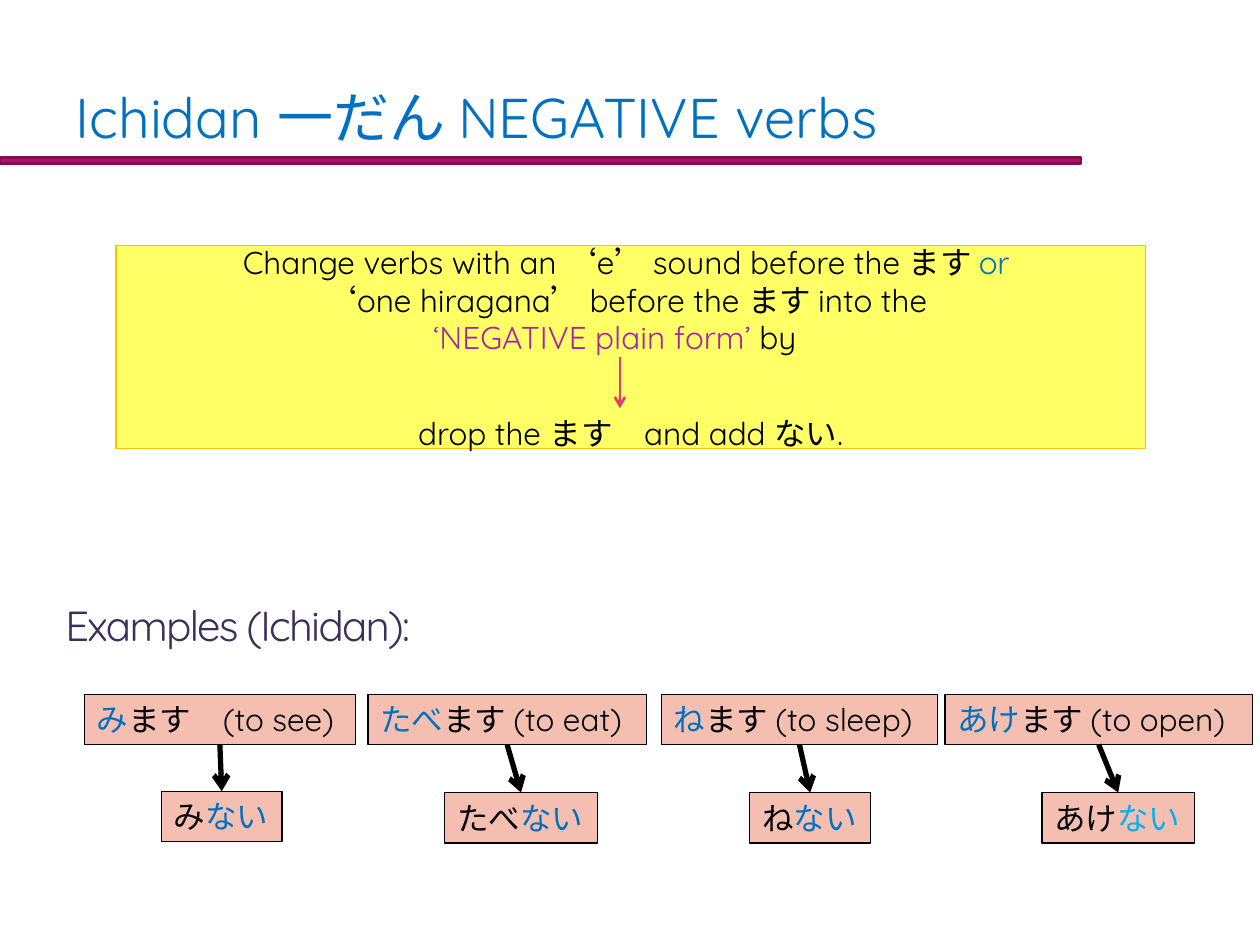
from pptx import Presentation
from pptx.dml.color import RGBColor
from pptx.enum.shapes import MSO_CONNECTOR, MSO_SHAPE
from pptx.enum.text import MSO_ANCHOR, MSO_AUTO_SIZE, PP_ALIGN
from pptx.oxml.ns import qn
from pptx.util import Inches, Pt
from lxml import etree

STRAIGHT = MSO_CONNECTOR.STRAIGHT
RECTANGLE = MSO_SHAPE.RECTANGLE
MIDDLE, TOP = MSO_ANCHOR.MIDDLE, MSO_ANCHOR.TOP
LEFT, CENTER = PP_ALIGN.LEFT, PP_ALIGN.CENTER
FIT_SHAPE = MSO_AUTO_SIZE.SHAPE_TO_FIT_TEXT
FONT = "Quicksand"

BLACK = RGBColor(0x00, 0x00, 0x00)
BLUE = RGBColor(0x00, 0x70, 0xC0)
LIGHT_BLUE = RGBColor(0x00, 0xB0, 0xF0)
INDIGO = RGBColor(0x3B, 0x30, 0x59)
PURPLE = RGBColor(0xA9, 0x25, 0xA5)
PINK = RGBColor(0xE3, 0x3D, 0x6F)
SALMON = RGBColor(0xF4, 0xBF, 0xB1)
YELLOW = RGBColor(0xFF, 0xFF, 0x66)
GOLD = RGBColor(0xFF, 0xC0, 0x00)
MAGENTA = RGBColor(0xB3, 0x11, 0x66)
DARK_MAGENTA = RGBColor(0x84, 0x0D, 0x4B)

RULE_LINES = [
    [("Change verbs with an ‘e’ sound before the ます ", BLACK), ("or ", BLUE)],
    [("‘one hiragana’ before the ます into the ", BLACK)],
    [("‘NEGATIVE plain form’ ", PURPLE), ("by\u3000", BLACK)],
    [("drop the ます\u3000and add ない.", BLACK)],
]

EXAMPLES = [
    ("み", "ます\u3000(to see)", BLUE, (0.67, 2.15), (1.28, 6.28, 0.96)),
    ("たべ", "ます (to eat)", BLUE, (2.92, 2.21), (3.53, 6.29, 1.21)),
    ("ね", "ます (to sleep)", BLUE, (5.25, 2.19), (5.95, 6.29, 0.96)),
    ("あけ", "ます (to open)", LIGHT_BLUE, (7.5, 2.44), (8.27, 6.29, 1.21)),
]


def write_runs(paragraph, runs, size, alignment=LEFT):
    """Fill a paragraph with (text, colour) runs of one size."""
    paragraph.alignment = alignment
    paragraph.font.name = FONT
    paragraph.font.size = Pt(size)
    for text, color in runs:
        run = paragraph.add_run()
        run.text = text
        run.font.color.rgb = color


def add_heading(slide, box, text, size, color):
    """Add a vertically centred line of text and return its paragraph."""
    frame = slide.shapes.add_textbox(*map(Inches, box)).text_frame
    frame.word_wrap = True
    frame.vertical_anchor = MIDDLE
    paragraph = frame.paragraphs[0]
    write_runs(paragraph, [(text, color)], size)
    return paragraph


def add_rectangle(slide, box, fill, line, line_width=0.75):
    """Add a flat outlined rectangle."""
    shape = slide.shapes.add_shape(RECTANGLE, *map(Inches, box))
    shape.shadow.inherit = False
    shape.fill.solid()
    shape.fill.fore_color.rgb = fill
    shape.line.color.rgb = line
    shape.line.width = Pt(line_width)
    return shape


def add_arrow(slide, start, end, color, width):
    """Add a straight connector with an open arrowhead at its end."""
    arrow = slide.shapes.add_connector(STRAIGHT, *map(Inches, start + end))
    arrow.line.color.rgb = color
    arrow.line.width = Pt(width)
    etree.SubElement(arrow.line._get_or_add_ln(), qn("a:tailEnd"), type="arrow")
    etree.SubElement(arrow._element.spPr, qn("a:effectLst"))
    return arrow


def add_verb_box(slide, box, runs):
    """Add a salmon box holding one verb form."""
    shape = add_rectangle(slide, box, SALMON, BLACK)
    frame = shape.text_frame
    frame.word_wrap = False
    frame.auto_size = FIT_SHAPE
    frame.vertical_anchor = TOP
    write_runs(frame.paragraphs[0], runs, 18)
    return shape


def add_example(slide, stem, ending, negative_color, verb_place, negative_place):
    """Add a polite verb joined by an arrow to its negative form."""
    verb_left, verb_width = verb_place
    verb = add_verb_box(slide, (verb_left, 5.51, verb_width, 0.4),
                        [(stem, BLUE), (ending, BLACK)])
    negative = add_verb_box(slide, (*negative_place, 0.4),
                            [(stem, BLACK), ("ない", negative_color)])
    arrow = add_arrow(slide, (verb_left, 5.91), negative_place[:2], BLACK, 3)
    arrow.begin_connect(verb, 2)
    arrow.end_connect(negative, 0)


def add_rule(slide):
    """Add the yellow box that states the grammar rule."""
    frame = add_rectangle(slide, (0.92, 1.95, 8.17, 1.61), YELLOW, GOLD).text_frame
    frame.word_wrap = True
    frame.vertical_anchor = MIDDLE
    for index, runs in enumerate(RULE_LINES):
        paragraph = frame.add_paragraph() if index else frame.paragraphs[0]
        write_runs(paragraph, runs, 18, CENTER)
    paragraph.line_spacing = 1.5
    paragraph.space_before = Pt(22)
    add_arrow(slide, (4.92, 2.83), (4.92, 3.24), PINK, 1.5)


def main():
    """Build and save the slide."""
    presentation = Presentation()
    presentation.slide_width = Inches(10)
    presentation.slide_height = Inches(7.5)
    slide = presentation.slides.add_slide(presentation.slide_layouts[6])
    add_heading(slide, (0.5, 0.3, 9.25, 1.25),
                "Ichidan 一だん NEGATIVE verbs\u3000", 32, BLUE)
    examples_heading = add_heading(slide, (0.42, 4.42, 9, 1.08),
                                   "Examples (Ichidan):", 24, INDIGO)
    examples_heading.runs[0].font._element.set("spc", "-100")
    for example in EXAMPLES:
        add_example(slide, *example)
    add_rule(slide)
    add_rectangle(slide, (0, 1.25, 8.58, 0.05), MAGENTA, DARK_MAGENTA, 1.5)
    presentation.save("out.pptx")


if __name__ == "__main__":
    main()
